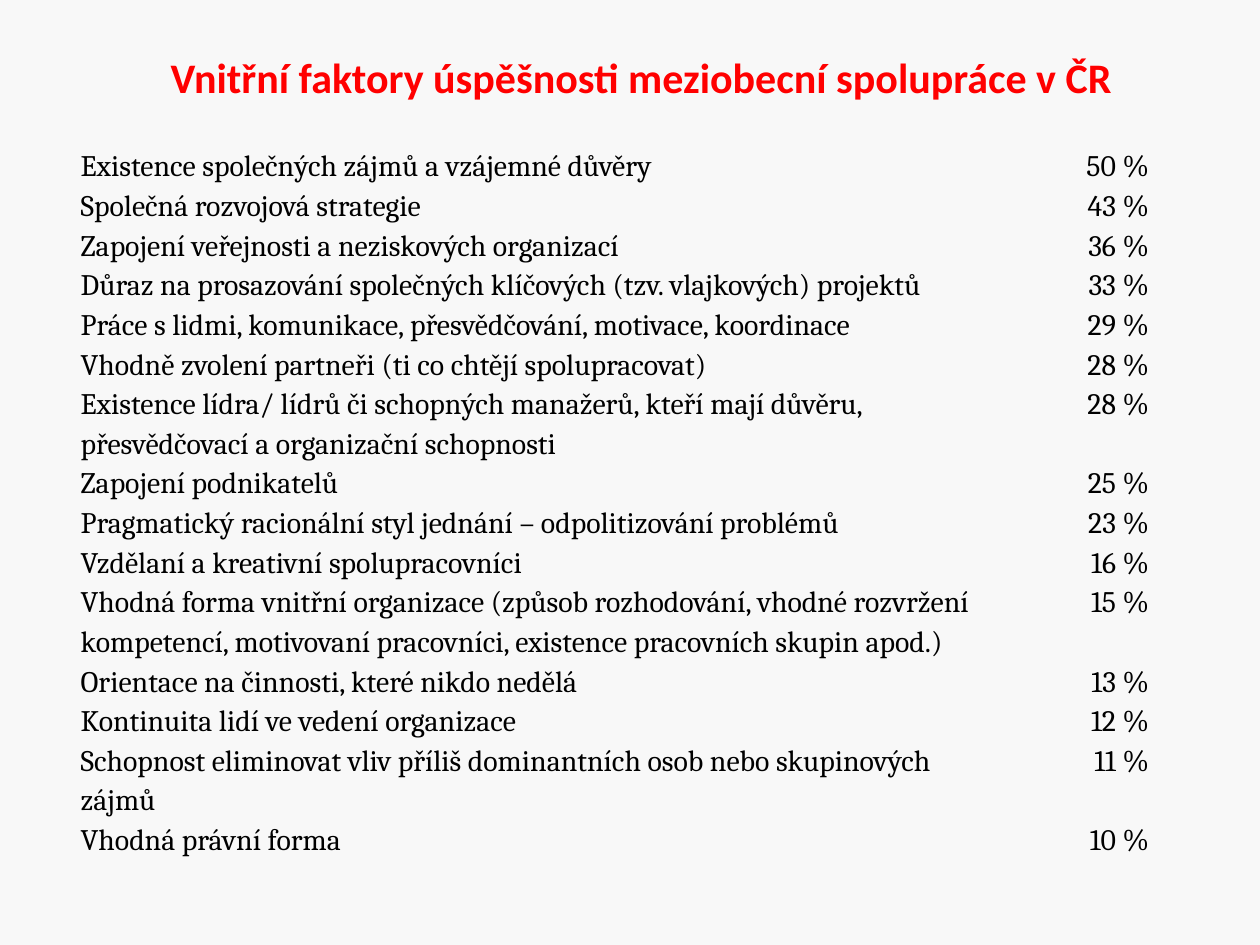
import dataclasses
import typing

import pptx
import pptx.dml.color
import pptx.enum.text
import pptx.oxml.ns
import pptx.slide
import pptx.table
import pptx.text.text
import pptx.util

Alignment = pptx.enum.text.PP_ALIGN
Anchor = pptx.enum.text.MSO_ANCHOR
Color = pptx.dml.color.RGBColor


@dataclasses.dataclass(frozen=True)
class TextStyle:
    font: str
    size: float
    color: str
    bold: bool = False


@dataclasses.dataclass(frozen=True)
class Theme:
    background: str = "F8F8F8"
    title: TextStyle = TextStyle("Calibri", 24, "FF0000", True)
    body: TextStyle = TextStyle("Cambria", 17, "000000")
    line_spacing: float = 1.15
    plain_table: str = "{2D5ABB26-0587-4C30-8999-92F81FD0307C}"


class Factor(typing.NamedTuple):
    name: str
    percent: int
    lines: int = 1


THEME = Theme()
WIDTH = pptx.util.Inches(10)
HEIGHT = pptx.util.Inches(7.5)
LEFT_SHARE = 0.059
TABLE_TOP_SHARE = 1.15 / 7.5
LINE_SHARE = 0.27 / 7.5
COLUMN_SHARES = (0.733, 0.017, 0.108)
SIDE_MARGIN = pptx.util.Inches(0.05)

FACTORS = (
    Factor("Existence společných zájmů a vzájemné důvěry", 50),
    Factor("Společná rozvojová strategie", 43),
    Factor("Zapojení veřejnosti a neziskových organizací", 36),
    Factor("Důraz na prosazování společných klíčových (tzv. vlajkových) projektů", 33),
    Factor("Práce s lidmi, komunikace, přesvědčování, motivace, koordinace", 29),
    Factor("Vhodně zvolení partneři (ti co chtějí spolupracovat)", 28),
    Factor("Existence lídra/ lídrů či schopných manažerů, kteří mají důvěru, "
           "přesvědčovací a organizační schopnosti", 28, 2),
    Factor("Zapojení podnikatelů", 25),
    Factor("Pragmatický racionální styl jednání – odpolitizování problémů", 23),
    Factor("Vzdělaní a kreativní spolupracovníci", 16),
    Factor("Vhodná forma vnitřní organizace (způsob rozhodování, vhodné rozvržení "
           "kompetencí, motivovaní pracovníci, existence pracovních skupin apod.)", 15, 2),
    Factor("Orientace na činnosti, které nikdo nedělá", 13),
    Factor("Kontinuita lidí ve vedení organizace", 12),
    Factor("Schopnost eliminovat vliv příliš dominantních osob nebo skupinových zájmů", 11, 2),
    Factor("Vhodná právní forma", 10),
)


def across(share: float) -> int:
    return round(WIDTH * share)


def down(share: float) -> int:
    return round(HEIGHT * share)


def add_run(paragraph: pptx.text.text._Paragraph, text: str, style: TextStyle) -> None:
    run = paragraph.add_run()
    run.text = text
    run.font.name = style.font
    run.font.size = pptx.util.Pt(style.size)
    run.font.bold = style.bold
    run.font.color.rgb = Color.from_string(style.color)


def add_title(slide: pptx.slide.Slide, text: str) -> None:
    title = slide.shapes.title
    title.left, title.top = across(LEFT_SHARE), down(0.29 / 7.5)
    title.width, title.height = across(0.9), down(0.63 / 7.5)
    title.text_frame.vertical_anchor = Anchor.MIDDLE
    paragraph = title.text_frame.paragraphs[0]
    paragraph.alignment = Alignment.CENTER
    add_run(paragraph, text, THEME.title)


def fill_cell(cell: pptx.table._Cell, text: str, alignment: Alignment) -> None:
    paragraph = cell.text_frame.paragraphs[0]
    paragraph.alignment = alignment
    paragraph.line_spacing = THEME.line_spacing
    add_run(paragraph, text, THEME.body)


def add_factor_table(slide: pptx.slide.Slide, factors: typing.Sequence[Factor]) -> None:
    line_counts = [factor.lines for factor in factors] + [1]
    table = slide.shapes.add_table(
        len(line_counts), len(COLUMN_SHARES),
        across(LEFT_SHARE), down(TABLE_TOP_SHARE),
        across(sum(COLUMN_SHARES)), down(sum(line_counts) * LINE_SHARE),
    ).table
    table.first_row = table.horz_banding = False
    style_id = table._tbl.tblPr.find(pptx.oxml.ns.qn("a:tableStyleId"))
    style_id.text = THEME.plain_table
    for column, share in zip(table.columns, COLUMN_SHARES):
        column.width = across(share)
    for row, lines in zip(table.rows, line_counts):
        row.height = down(lines * LINE_SHARE)
    for cell in table.iter_cells():
        cell.fill.background()
        cell.margin_left = cell.margin_right = SIDE_MARGIN
        cell.margin_top = cell.margin_bottom = 0
    for index, factor in enumerate(factors):
        fill_cell(table.cell(index, 0), factor.name, Alignment.LEFT)
        fill_cell(table.cell(index, 2), f"{factor.percent} %", Alignment.RIGHT)


def main() -> None:
    presentation = pptx.Presentation()
    presentation.slide_width, presentation.slide_height = WIDTH, HEIGHT
    slide = presentation.slides.add_slide(presentation.slide_layouts.get_by_name("Title Only"))
    slide.background.fill.solid()
    slide.background.fill.fore_color.rgb = Color.from_string(THEME.background)
    add_title(slide, "Vnitřní faktory úspěšnosti meziobecní spolupráce v ČR")
    add_factor_table(slide, FACTORS)
    presentation.save("out.pptx")


if __name__ == "__main__":
    main()
